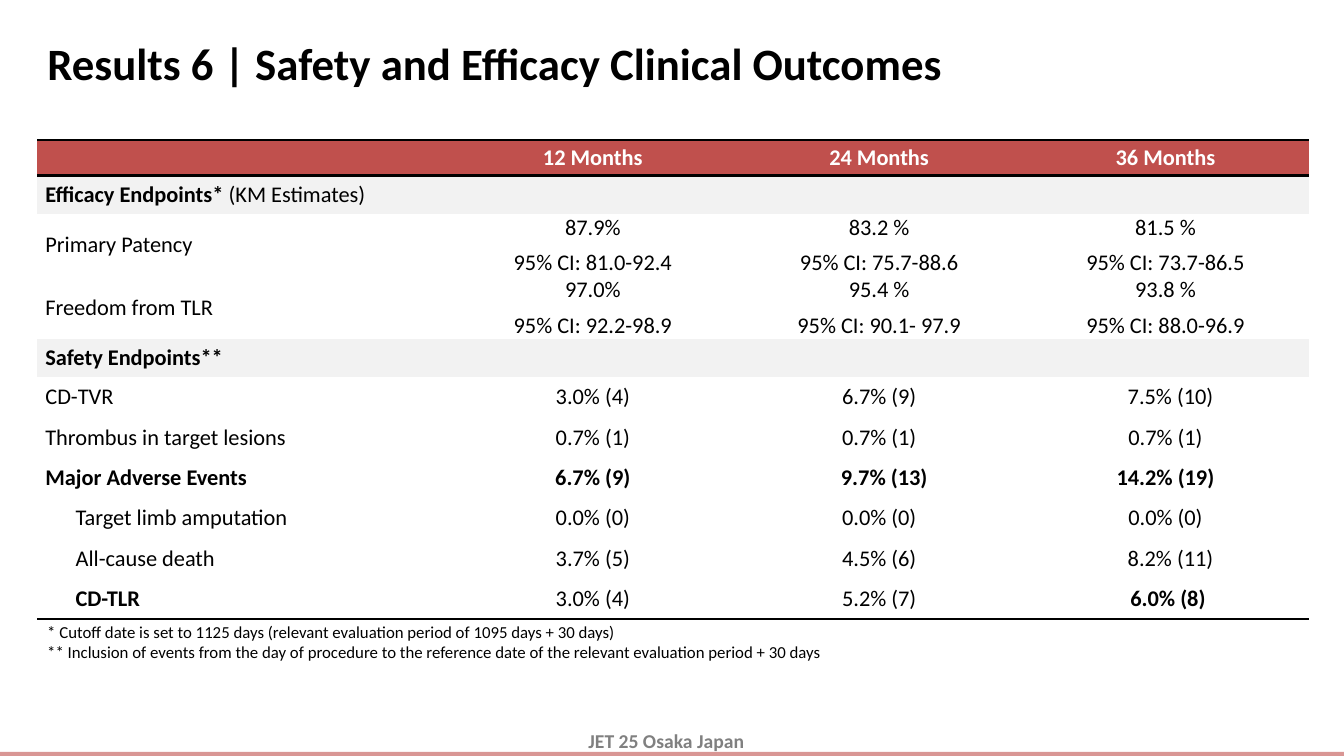
"""Build the slide on safety and efficacy clinical outcomes."""
from lxml import etree
from pptx import Presentation
from pptx.dml.color import RGBColor
from pptx.enum.shapes import MSO_SHAPE
from pptx.enum.text import MSO_ANCHOR as Anchor, PP_ALIGN as Align
from pptx.oxml import parse_xml
from pptx.oxml.ns import nsdecls, qn
from pptx.util import Inches, Pt

COLORS = {"black": "000000", "white": "FFFFFF", "red": "C0504D",
          "pink": "D99694", "gray": "808080", "band": "F2F2F2"}
NO_GRID_STYLE = "{2D5ABB26-0587-4C30-8999-92F81FD0307C}"


def set_font(font, size, color="black", bold=False):
    font.name = "Calibri"
    font.size = Pt(size)
    font.bold = bold
    font.color.rgb = RGBColor.from_string(COLORS[color])


def add_rule(cell, edge):
    line = parse_xml(f'<a:{edge} {nsdecls("a")} w="{Pt(2)}"/>')
    fill = etree.SubElement(line, qn("a:solidFill"))
    etree.SubElement(fill, qn("a:srgbClr"), val=COLORS["black"])
    cell._tc.get_or_add_tcPr().insert(0, line)


prs = Presentation()
prs.slide_width, prs.slide_height = Inches(13.33), Inches(7.5)
slide = prs.slides.add_slide(prs.slide_layouts[5])

bottom_bar = slide.shapes.add_shape(
    MSO_SHAPE.RECTANGLE, 0, Inches(7.46), Inches(13.33), Inches(0.05))
bottom_bar.shadow.inherit = False
bottom_bar.fill.solid()
bottom_bar.fill.fore_color.rgb = RGBColor.from_string(COLORS["pink"])
bottom_bar.line.fill.background()

footer = slide.shapes.add_textbox(
    Inches(5.73), Inches(7.18), Inches(1.76), Inches(0.34)).text_frame
footer.word_wrap = False
footer.text = "JET 25 Osaka Japan"
footer.paragraphs[0].alignment = Align.CENTER
set_font(footer.paragraphs[0].font, 14, "gray", True)

title = slide.shapes.title
title.left, title.top = Inches(0.37), Inches(0.3)
title.width, title.height = Inches(12.6), Inches(0.94)
title.text_frame.text = "Results 6 | Safety and Efficacy Clinical Outcomes"
title.text_frame.vertical_anchor = Anchor.TOP
title.text_frame.paragraphs[0].alignment = Align.LEFT
set_font(title.text_frame.paragraphs[0].font, 32, bold=True)

footnotes = slide.shapes.add_textbox(
    Inches(0.37), Inches(6.12), Inches(7.96), Inches(0.5)).text_frame
footnotes.word_wrap = False
footnotes.text = (
    "* Cutoff date is set to 1125 days (relevant evaluation period of 1095 days + 30 days)\n"
    "** Inclusion of events from the day of procedure to the reference date "
    "of the relevant evaluation period + 30 days")
for note in footnotes.paragraphs:
    set_font(note.font, 12)

outcomes = [
    ["", "12 Months", "24 Months", "36 Months"],
    ["Efficacy Endpoints* ", "", "", ""],
    ["Primary Patency", "87.9%\n95% CI: 81.0-92.4",
     "83.2 %\n95% CI: 75.7-88.6", "81.5 %\n95% CI: 73.7-86.5"],
    ["Freedom from TLR", "97.0%\n95% CI: 92.2-98.9",
     "95.4 %\n95% CI: 90.1- 97.9", "93.8 %\n95% CI: 88.0-96.9"],
    ["Safety Endpoints**", "", "", ""],
    ["CD-TVR", "3.0% (4)", "6.7% (9)", "7.5% (10)"],
    ["Thrombus in target lesions", "0.7% (1)", "0.7% (1)", "0.7% (1)"],
    ["Major Adverse Events", "6.7% (9)", "9.7% (13)", "14.2% (19)"],
    ["Target limb amputation", "0.0% (0)", "0.0% (0)", "0.0% (0)"],
    ["All-cause death", "3.7% (5)", "4.5% (6)", "8.2% (11)"],
    ["CD-TLR", "3.0% (4)", "5.2% (7)", "6.0% (8)"],
]
header_row, section_rows, interval_rows, last_row = 0, (1, 4), (2, 3), 10
bold_rows = (0, 1, 4, 7)
bold_cells = ((10, 0), (10, 3))
indents = {(8, 0): 0.3, (9, 0): 0.3, (10, 0): 0.3,
           (5, 3): 0.1, (7, 2): 0.1, (9, 3): 0.1, (10, 3): 0.05}

table = slide.shapes.add_table(
    len(outcomes), 4, Inches(0.37), Inches(1.39), Inches(12.6), Inches(4.74)).table
table.first_row = table.horz_banding = False
table._tbl.tblPr.find(qn("a:tableStyleId")).text = NO_GRID_STYLE
for column, width in zip(table.columns, (4.09, 2.84, 2.84, 2.84)):
    column.width = Inches(width)

for r, values in enumerate(outcomes):
    if r == header_row:
        height, fill, ink = 0.35, "red", "white"
    elif r in section_rows:
        height, fill, ink = 0.38, "band", "black"
    else:
        height, fill, ink = 0.62 if r in interval_rows else 0.4, "white", "black"
    table.rows[r].height = Inches(height)
    for c, value in enumerate(values):
        cell = table.cell(r, c)
        cell.text = value
        cell.vertical_anchor = Anchor.MIDDLE
        cell.margin_left = cell.margin_right = Inches(0.08)
        cell.margin_top = cell.margin_bottom = 0
        cell.fill.solid()
        cell.fill.fore_color.rgb = RGBColor.from_string(COLORS[fill])
        for paragraph in cell.text_frame.paragraphs:
            paragraph.alignment = Align.CENTER if c else Align.LEFT
            paragraph.space_after = Pt(6 if c and r in interval_rows else 8)
            set_font(paragraph.font, 16, ink, r in bold_rows or (r, c) in bold_cells)
            if (r, c) in indents:
                paragraph._p.get_or_add_pPr().set("marL", str(Inches(indents[r, c])))
        if r in (header_row, last_row):
            add_rule(cell, "lnB")
        if r == header_row:
            add_rule(cell, "lnT")

for r in section_rows:
    table.cell(r, 0).merge(table.cell(r, 1))
estimate_note = table.cell(1, 0).text_frame.paragraphs[0].add_run()
estimate_note.text = "(KM Estimates)"
estimate_note.font.bold = False

prs.save("out.pptx")
